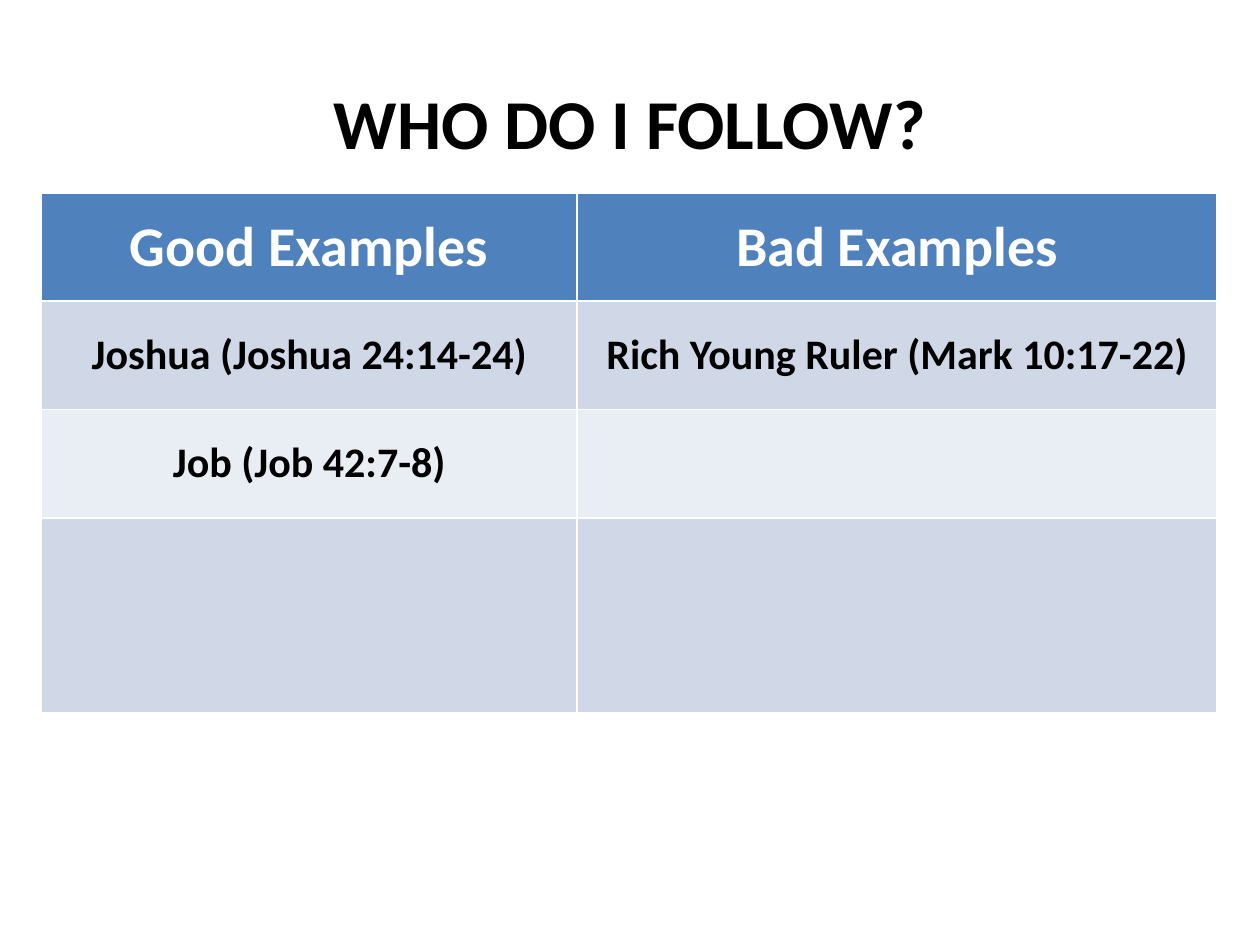
import dataclasses

import pptx
import pptx.dml.color
import pptx.enum.text
import pptx.util

Inches = pptx.util.Inches


@dataclasses.dataclass(frozen=True)
class Theme:
    """Colours, font and type sizes of the slide."""
    font: str = "Calibri"
    ink: str = "000000"
    paper: str = "FFFFFF"
    header: str = "4F81BD"
    bands: tuple = ("D0D8E8", "E9EDF4")
    title_size: int = 40
    header_size: int = 32
    body_size: int = 24


THEME = Theme()
EXAMPLES = [
    ("Good Examples", "Bad Examples"),
    ("Joshua (Joshua 24:14-24)", "Rich Young Ruler (Mark 10:17-22)"),
    ("Job (Job 42:7-8)", ""),
    ("", ""),
]
COLUMN_WIDTHS = (4.25, 5.08)
ROW_HEIGHTS = (0.86, 0.86, 0.86, 1.55)


def rgb(code):
    """Return the colour for a hex code."""
    return pptx.dml.color.RGBColor.from_string(code)


def write(frame, text, *, size, color=THEME.ink, bold=True):
    """Write one centred, formatted paragraph into a text frame."""
    frame.vertical_anchor = pptx.enum.text.MSO_ANCHOR.MIDDLE
    paragraph = frame.paragraphs[0]
    paragraph.alignment = pptx.enum.text.PP_ALIGN.CENTER
    run = paragraph.add_run()
    run.text = text
    run.font.name = THEME.font
    run.font.size = pptx.util.Pt(size)
    run.font.bold = bold
    run.font.color.rgb = rgb(color)


def place_title(slide, left, top, width, height):
    """Place the question in the title placeholder."""
    question = slide.shapes.title
    question.left, question.top = Inches(left), Inches(top)
    question.width, question.height = Inches(width), Inches(height)
    question.text_frame.word_wrap = True
    write(question.text_frame, "WHO DO I FOLLOW?", size=THEME.title_size)


def place_examples(slide, left, top, width, height):
    """Place the table of good and bad examples, scaled to its box."""
    examples = slide.shapes.add_table(
        len(ROW_HEIGHTS), len(COLUMN_WIDTHS),
        Inches(left), Inches(top), Inches(width), Inches(height)).table
    for column, share in zip(examples.columns, COLUMN_WIDTHS):
        column.width = Inches(width * share / sum(COLUMN_WIDTHS))
    for row, share in zip(examples.rows, ROW_HEIGHTS):
        row.height = Inches(height * share / sum(ROW_HEIGHTS))
    for row_index, entries in enumerate(EXAMPLES):
        is_header = row_index == 0
        band = THEME.header if is_header else THEME.bands[(row_index - 1) % 2]
        size = THEME.header_size if is_header else THEME.body_size
        color = THEME.paper if is_header else THEME.ink
        for column_index, entry in enumerate(entries):
            cell = examples.cell(row_index, column_index)
            cell.fill.solid()
            cell.fill.fore_color.rgb = rgb(band)
            if entry:
                cell.vertical_anchor = pptx.enum.text.MSO_ANCHOR.MIDDLE
                write(cell.text_frame, entry, size=size, color=color)


def main():
    """Build and save the slide."""
    deck = pptx.Presentation()
    deck.slide_width, deck.slide_height = Inches(10), Inches(7.5)
    slide = deck.slides.add_slide(deck.slide_layouts.get_by_name("Title Only"))
    slide.background.fill.solid()
    slide.background.fill.fore_color.rgb = rgb(THEME.paper)
    place_title(slide, 0, 0.58, 10, 0.77)
    place_examples(slide, 0.33, 1.53, 9.33, 4.13)
    deck.save("out.pptx")


if __name__ == "__main__":
    main()
